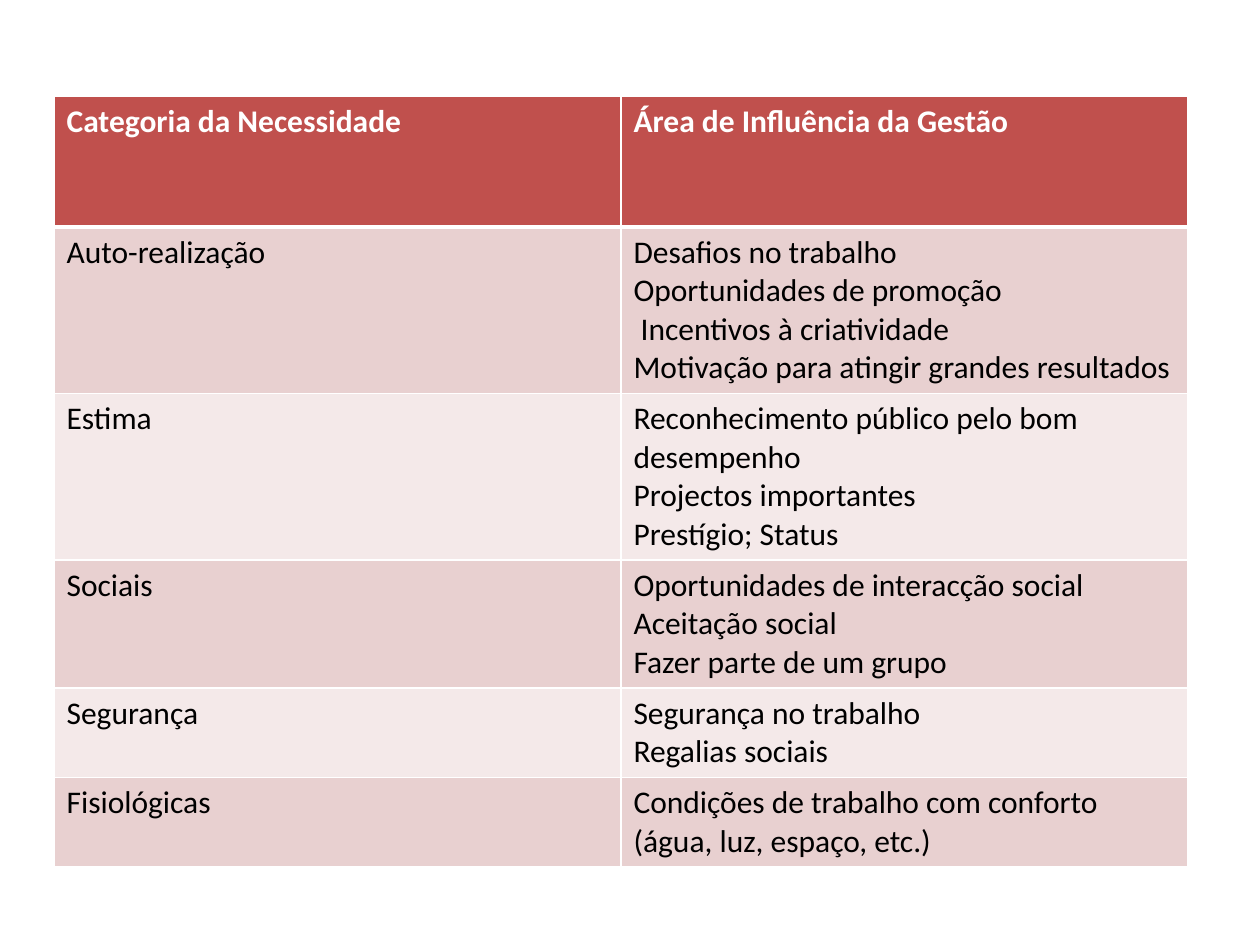
from dataclasses import dataclass

from lxml import etree
from pptx import Presentation
from pptx import util as u
from pptx.dml.color import RGBColor
from pptx.oxml.ns import qn

SCALE = 914400 // 126  # EMU in one px


@dataclass(frozen=True)
class Theme:
    font: str = "Calibri"
    size: int = 18
    head: str = "C0504D"
    dark: str = "E8D0D0"
    light: str = "F4E9E9"
    white: str = "FFFFFF"
    ink: str = "000000"
    thin: int = 1
    thick: int = 3


THEME = Theme()

HEADS = ("Categoria da Necessidade", ["Área de Influência da Gestão"])
NEEDS = [
    ("Auto-realização", [
        "Desafios no trabalho",
        "Oportunidades de promoção",
        " Incentivos à criatividade",
        "Motivação para atingir grandes resultados",
    ]),
    ("Estima", [
        "Reconhecimento público pelo bom desempenho",
        "Projectos importantes",
        "Prestígio; Status",
    ]),
    ("Sociais", [
        "Oportunidades de interacção social",
        "Aceitação social",
        "Fazer parte de um grupo",
    ]),
    ("Segurança", ["Segurança no trabalho", "Regalias sociais"]),
    ("Fisiológicas", [
        "Condições de trabalho com conforto (água, luz, espaço, etc.)",
    ]),
]
HEIGHTS = [131, 166, 166, 128, 89, 89]


def px(n):
    return u.Emu(n * SCALE)


def write(frame, lines, color=THEME.ink, bold=False):
    """Put one paragraph per line into a text frame."""
    for i, line in enumerate(lines):
        para = frame.paragraphs[0] if i == 0 else frame.add_paragraph()
        run = para.add_run()
        run.text = line
        font = run.font
        font.name, font.size, font.bold = THEME.font, u.Pt(THEME.size), bold
        font.color.rgb = RGBColor.from_string(color)


def edge(cell, top, bottom):
    """Draw white borders; widths are in points."""
    props = cell._tc.get_or_add_tcPr()
    for side, width in zip("LRTB", (THEME.thin, THEME.thin, top, bottom)):
        line = etree.SubElement(props, qn(f"a:ln{side}"), w=str(u.Pt(width)))
        fill = etree.SubElement(line, qn("a:solidFill"))
        etree.SubElement(fill, qn("a:srgbClr"), val=THEME.white)


def paint(cell, color):
    cell.fill.solid()
    cell.fill.fore_color.rgb = RGBColor.from_string(color)


def add_grid(slide, left, top, width):
    rows = [HEADS] + NEEDS
    grid = slide.shapes.add_table(
        len(rows), 2, px(left), px(top), px(width), px(sum(HEIGHTS))).table
    for i, (need, areas) in enumerate(rows):
        grid.rows[i].height = px(HEIGHTS[i])
        head = i == 0
        back = THEME.head if head else THEME.dark if i % 2 else THEME.light
        # The thick rule lies between the header and the first need
        over = THEME.thick if i == 1 else THEME.thin
        under = THEME.thick if head else THEME.thin
        for cell, lines in zip(grid.rows[i].cells, ([need], areas)):
            edge(cell, over, under)
            paint(cell, back)
            write(cell.text_frame, lines, bold=head,
                  color=THEME.white if head else THEME.ink)


def main():
    deck = Presentation()
    deck.slide_width, deck.slide_height = px(1260), px(945)
    slide = deck.slides.add_slide(deck.slide_layouts[6])
    # Needs and the areas that management can influence
    add_grid(slide, 54, 96, 1134)
    deck.save("out.pptx")


if __name__ == "__main__":
    main()
